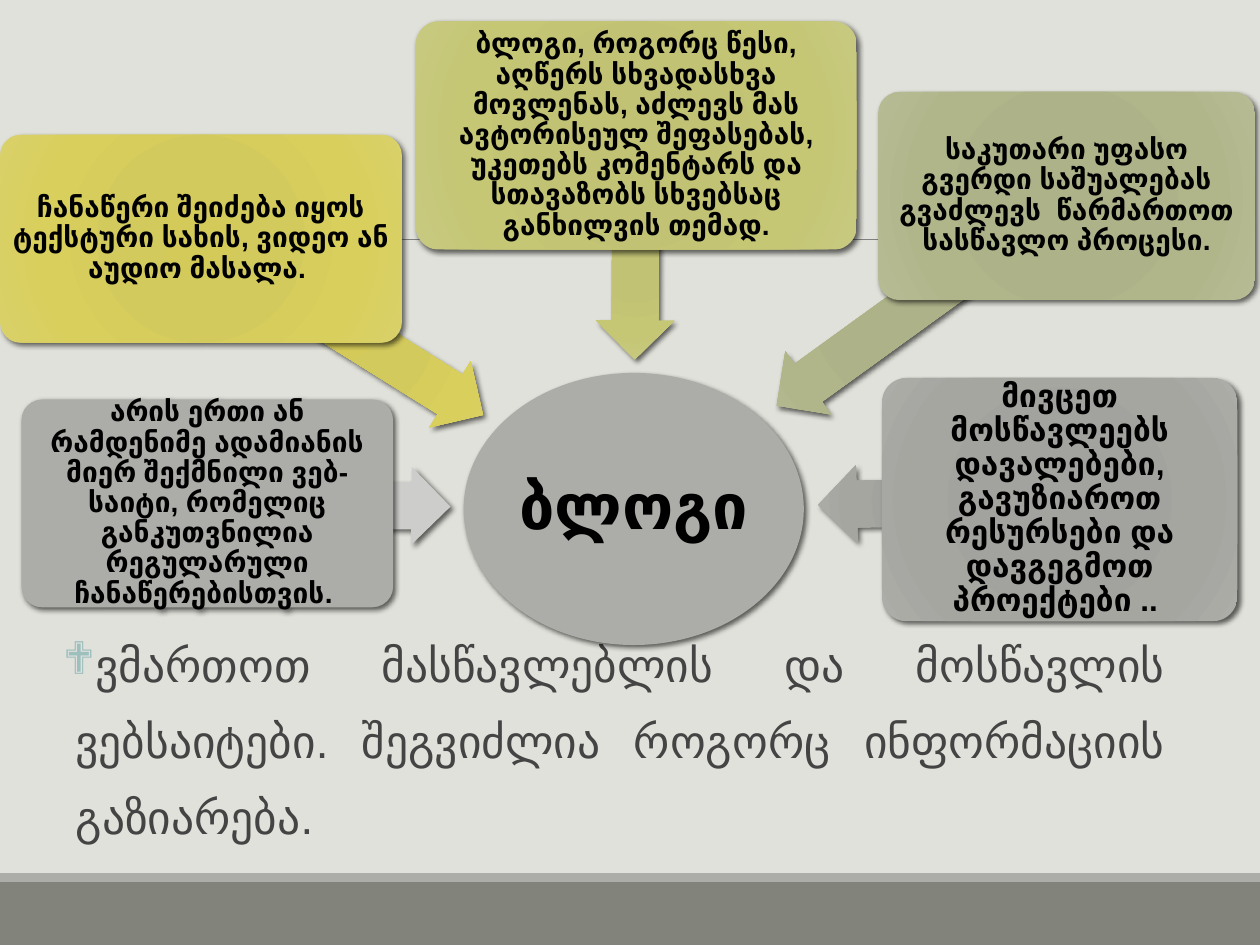
import math
from dataclasses import dataclass

import pptx
import pptx.dml.color
import pptx.enum.shapes
import pptx.enum.text
import pptx.oxml
import pptx.oxml.ns
import pptx.util

SHAPES = pptx.enum.shapes.MSO_SHAPE
ALIGN = pptx.enum.text.PP_ALIGN
DRAWING = pptx.oxml.ns.nsdecls("a")
COLUMNS, ROWS = 100, 75
CELL = pptx.util.Inches(0.1)


@dataclass(frozen=True)
class Theme:
    background: str = "E1E1DB"
    footer: str = "82847C"
    gray: str = "ACADA8"
    pale: str = "CDCECB"
    rule: str = "808080"
    black: str = "000000"
    body: str = "444444"
    bullet: str = "9DBFBE"
    yellow: tuple = ("D4CA59", "D3CA5D", "D9CF5C", "D9D16A")
    lime: tuple = ("C0C271", "C1C273", "C5C774", "C8C980")
    olive: tuple = ("ADB187", "AEB289", "B1B68A", "B7BB94")
    stone: tuple = ("A1A29C", "A2A39E", "A5A6A0", "ACADA8")
    stops: tuple = (0, 34, 70, 100)
    font: str = "Arial"
    hub_font: str = "Calibri"
    hub_size: int = 36
    body_size: int = 26
    card_size: int = 16
    large_card_size: int = 18


THEME = Theme()

# place (column, row, columns, rows), card fill, arrow fill, arrow length, type size, text
CARDS = [
    ((1.7, 31.7, 29.5, 16.5), THEME.gray, THEME.pale, 19.3, THEME.card_size,
     "არის ერთი ან რამდენიმე ადამიანის მიერ შექმნილი ვებ-საიტი, რომელიც "
     "განკუთვნილია რეგულარული ჩანაწერებისთვის. "),
    ((0, 10.7, 31.9, 16.5), THEME.yellow, THEME.yellow, 26.4, THEME.card_size,
     "ჩანაწერი შეიძება იყოს ტექსტური სახის, ვიდეო ან აუდიო მასალა. "),
    ((33, 1.7, 35, 18.1), THEME.lime, THEME.lime, 17.8, THEME.card_size,
     "ბლოგი, როგორც წესი, აღწერს სხვადასხვა მოვლენას, აძლევს მას ავტორისეულ "
     "შეფასებას, უკეთებს კომენტარს და სთავაზობს სხვებსაც განხილვის თემად."),
    ((69.7, 7.3, 29.9, 16.5), THEME.olive, THEME.olive, 28.4, THEME.card_size,
     "საკუთარი უფასო გვერდი საშუალებას გვაძლევს  წარმართოთ სასწავლო პროცესი."),
    ((70, 30, 28.2, 19.3), THEME.stone, THEME.stone, 19.2, THEME.large_card_size,
     "მივცეთ მოსწავლეებს დავალებები, გავუზიაროთ რესურსები და დავგეგმოთ "
     "პროექტები .. "),
]
HUB = (36.8, 29.6, 27, 21.6)
ARROW_WIDTH = 6.2


def grid(*cells):
    return [round(cell * CELL) for cell in cells]


def color(name):
    return pptx.dml.color.RGBColor.from_string(name)


def center(place):
    left, top, width, height = place
    return left + width / 2, top + height / 2


def paint(shape, fill):
    """Fill with one colour, or with a radial gradient when given a tuple."""
    if isinstance(fill, str):
        shape.fill.solid()
        shape.fill.fore_color.rgb = color(fill)
        return
    shape.fill.gradient()
    plain = shape._element.spPr.find(pptx.oxml.ns.qn("a:gradFill"))
    stops = "".join(f'<a:gs pos="{stop * 1000}"><a:srgbClr val="{name}"/></a:gs>'
                    for stop, name in zip(THEME.stops, fill))
    radial = pptx.oxml.parse_xml(
        f'<a:gradFill {DRAWING} rotWithShape="1"><a:gsLst>{stops}</a:gsLst>'
        '<a:path path="circle"><a:fillToRect l="100000" t="100000" r="100000" b="100000"/>'
        '</a:path></a:gradFill>')
    plain.getparent().replace(plain, radial)


def add_block(page, kind, place, fill):
    shape = page.shapes.add_shape(kind, *grid(*place))
    shape.shadow.inherit = False
    shape.line.fill.background()
    paint(shape, fill)
    return shape


def cast_shadow(shape):
    effects = shape._element.spPr.find(pptx.oxml.ns.qn("a:effectLst"))
    effects.append(pptx.oxml.parse_xml(
        f'<a:outerShdw {DRAWING} blurRad="38100" dist="25400" dir="2700000" rotWithShape="0">'
        f'<a:srgbClr val="{THEME.black}"><a:alpha val="60000"/></a:srgbClr></a:outerShdw>'))


def set_margins(frame, side, vertical):
    frame.margin_left = frame.margin_right = pptx.util.Inches(side)
    frame.margin_top = frame.margin_bottom = pptx.util.Inches(vertical)


def add_span(para, text, font, size, name, bold=False):
    span = para.add_run()
    span.text = text
    span.font.name = font
    span.font.size = pptx.util.Pt(size)
    span.font.bold = bold
    span.font.color.rgb = color(name)


def write_label(shape, text, font, size):
    frame = shape.text_frame
    frame.word_wrap = True
    frame.vertical_anchor = pptx.enum.text.MSO_ANCHOR.MIDDLE
    set_margins(frame, 0.03, 0.03)
    para = frame.paragraphs[0]
    para.alignment = ALIGN.CENTER
    para.line_spacing = 0.9
    add_span(para, text, font, size, THEME.black, bold=True)


def add_arrow(page, place, fill, length):
    """Run an arrow from the middle of a card towards the middle of the hub."""
    (start_x, start_y), (hub_x, hub_y) = center(place), center(HUB)
    angle = math.atan2(hub_y - start_y, hub_x - start_x)
    left = start_x + length / 2 * (math.cos(angle) - 1)
    top = start_y + length / 2 * math.sin(angle) - ARROW_WIDTH / 2
    arrow = add_block(page, SHAPES.LEFT_ARROW, (left, top, length, ARROW_WIDTH), fill)
    arrow.adjustments[0], arrow.adjustments[1] = 0.6, 0.5
    arrow.rotation = math.degrees(angle) + 180
    cast_shadow(arrow)


def add_card(page, place, fill, size, text):
    card = add_block(page, SHAPES.ROUNDED_RECTANGLE, place, fill)
    card.adjustments[0] = 0.1
    cast_shadow(card)
    write_label(card, text, THEME.font, size)


def add_hub(page, text):
    hub = add_block(page, SHAPES.OVAL, HUB, THEME.gray)
    cast_shadow(hub)
    write_label(hub, text, THEME.hub_font, THEME.hub_size)


def add_rule(page, left, right, row):
    rule = page.shapes.add_connector(pptx.enum.shapes.MSO_CONNECTOR.STRAIGHT,
                                     *grid(left, row, right, row))
    rule.line.color.rgb = color(THEME.rule)
    rule.line.width = pptx.util.Pt(0.5)
    rule._element.spPr.append(pptx.oxml.parse_xml(f"<a:effectLst {DRAWING}/>"))


def add_bullet_text(page, place, text):
    box = page.shapes.add_textbox(*grid(*place))
    frame = box.text_frame
    frame.word_wrap = True
    set_margins(frame, 0, 0.05)
    para = frame.paragraphs[0]
    para.alignment = ALIGN.JUSTIFY
    para.line_spacing = 1.4
    indent = pptx.util.Inches(0.1)
    properties = para._p.get_or_add_pPr()
    properties.set("marL", str(indent))
    properties.set("indent", str(-indent))
    for mark in (f'<a:buClr {DRAWING}><a:srgbClr val="{THEME.bullet}"/></a:buClr>',
                 f'<a:buFont {DRAWING} typeface="Wingdings"/>',
                 f'<a:buChar {DRAWING} char="❖"/>'):
        properties.append(pptx.oxml.parse_xml(mark))
    add_span(para, text, THEME.font, THEME.body_size, THEME.body)


def main():
    deck = pptx.Presentation()
    deck.slide_width, deck.slide_height = grid(COLUMNS, ROWS)
    page = deck.slides.add_slide(deck.slide_layouts[6])
    page.background.fill.solid()
    page.background.fill.fore_color.rgb = color(THEME.background)

    add_block(page, SHAPES.RECTANGLE, (0, 70, COLUMNS, 5), THEME.footer)
    add_block(page, SHAPES.RECTANGLE, (0, 69.3, COLUMNS, 0.7), THEME.gray)
    add_rule(page, 9.8, 91.5, 19)
    add_bullet_text(page, (5, 48.3, 87.5, 20.8),
                    "ვმართოთ მასწავლებლის და მოსწავლის ვებსაიტები. "
                    "შეგვიძლია როგორც ინფორმაციის გაზიარება.")
    add_hub(page, "ბლოგი")
    for place, fill, arrow_fill, length, size, text in CARDS:
        add_arrow(page, place, arrow_fill, length)
        add_card(page, place, fill, size, text)


    deck.save("out.pptx")


if __name__ == "__main__":
    main()
